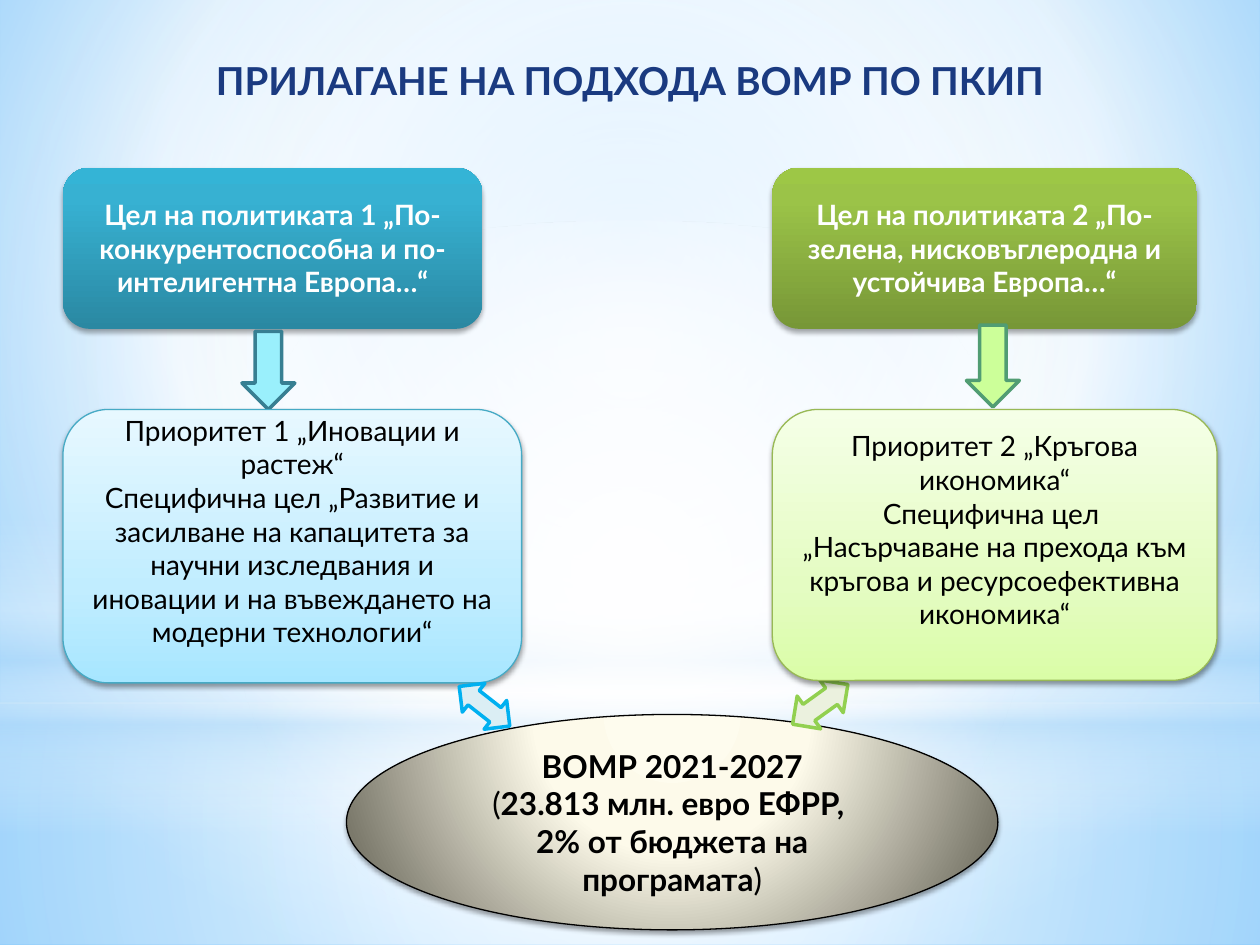
import pptx
import pptx.util
import pptx.dml.color
import pptx.enum.shapes
import pptx.enum.text
import pptx.oxml
import pptx.oxml.ns

Inches, Pt = pptx.util.Inches, pptx.util.Pt
Kind = pptx.enum.shapes.MSO_SHAPE
Anchor = pptx.enum.text.MSO_ANCHOR
CENTER = pptx.enum.text.PP_ALIGN.CENTER
NS = pptx.oxml.ns.nsdecls("a")


def color(code):
    return pptx.dml.color.RGBColor.from_string(code)


def blend(root, stops, ang=None, rect=None):
    """Swap the first gradient under root for these stops (place, colour, opacity)."""
    gs = "".join(
        f'<a:gs pos="{pos * 1000}"><a:srgbClr val="{code}">'
        f'<a:alpha val="{(alpha or [100])[0] * 1000}"/></a:srgbClr></a:gs>'
        for pos, code, *alpha in stops)
    if rect:
        sides = " ".join(f'{side}="{val * 1000}"' for side, val in zip("ltrb", rect))
        way = f'<a:path path="circle"><a:fillToRect {sides}/></a:path>'
    else:
        way = f'<a:lin ang="{ang * 60000}" scaled="0"/>'
    old = next(root.iter(pptx.oxml.ns.qn("a:gradFill")))
    old.getparent().replace(old, pptx.oxml.parse_xml(
        f'<a:gradFill {NS} rotWithShape="1"><a:gsLst>{gs}</a:gsLst>{way}</a:gradFill>'))


deck = pptx.Presentation()
deck.slide_width, deck.slide_height = Inches(10), Inches(7.5)
slide = deck.slides.add_slide(deck.slide_layouts[5])

# Background
slide.background.fill.gradient()
blend(slide.element, [(0, "9ED5FF"), (60, "FFFFFF"), (100, "5BB9FF")],
      rect=(20, 10, 20, 60))

# Gradients of the soft glows and of the boxes
mid = (50, 50, 50, 50)
floor = dict(rect=mid, stops=[(0, "FFFFFF", 91), (37, "FFFFFF", 76), (100, "B4DCFA", 79)])
sky = dict(rect=mid, stops=[(0, "FFFFFF", 89), (48, "FFFFFF", 62), (100, "B4DCFA", 79)])
band = dict(ang=90, stops=[(0, "FFFFFF", 0), (29, "FFFFFF", 30), (45, "B4DCFA", 40),
                           (55, "FFFFFF", 26), (65, "B4DCFA", 60), (100, "FFFFFF", 0)])
glow = dict(rect=mid, stops=[(0, "FFFFFF"), (56, "FFFFFF", 0)])
stone = dict(rect=(50, -80, 50, 180),
             stops=[(0, "FEFCEE"), (40, "FDFAEA"), (100, "7B796B")])
teal = dict(ang=270, stops=[(0, "2A88A2"), (80, "37B1D2"), (100, "34B4D6")])
green = dict(ang=270, stops=[(0, "779737"), (80, "9BC348"), (100, "9DC746")])
aqua = dict(ang=270, stops=[(0, "A7E6FF"), (35, "C1EDFF"), (100, "E7F8FF")])
lime = dict(ang=270, stops=[(0, "DAFDA7"), (35, "E4FCC2"), (100, "F5FFE7")])

# Text formats; the priority boxes sit a little above the middle
head = dict(size=Pt(16), bold=True, ink="FFFFFF")
body = dict(size=Pt(16), bold=False, ink="000000")
core = dict(size=Pt(18), bold=True, ink="000000")
raised = Inches(0.29)

# Wording: paragraphs as lists of runs
total = [["ВОМР 2021-2027"], ["(", "23.813 млн. евро ЕФРР, "],
         ["2% от бюджета на програмата", ")"]]
goal1 = [["Цел на политиката 1 „По-конкурентоспособна и по-интелигентна Европа…“"]]
goal2 = [["Цел на политиката 2 „По-зелена, нисковъглеродна и устойчива Европа…“"]]
prio1 = [["Приоритет 1 „Иновации и растеж“"],
         ["Специфична цел „Развитие и засилване на капацитета за научни изследвания "
          "и иновации и на въвеждането на модерни технологии“"]]
prio2 = [["Приоритет 2 „Кръгова икономика“"], ["Специфична цел "],
         ["„Насърчаване на прехода към кръгова и ресурсоефективна икономика“"]]

# Shapes from back to front: kind, frame, fill, line, width, turn, text, format
rect, oval, box = Kind.RECTANGLE, Kind.OVAL, Kind.ROUNDED_RECTANGLE
down, both = Kind.DOWN_ARROW, Kind.UP_DOWN_ARROW
parts = [
    (rect, (0, 5.58, 10, 1.92), floor, None, 0, 0, None, None),
    (rect, (0, 0, 10, 5.58), sky, None, 0, 0, None, None),
    (rect, (0, 4.12, 10, 2.5), band, None, 0, 0, None, None),
    (oval, (0, 1.75, 10, 5.58), glow, None, 0, 0, None, None),
    (oval, (2.75, 5.67, 5.17, 1.71), stone, "000000", 0.75, 0, total, core),
    (box, (0.5, 1.33, 3.33, 1.28), teal, None, 0, 0, goal1, head),
    (box, (6.13, 1.33, 3.37, 1.28), green, None, 0, 0, goal2, head),
    (down, (1.92, 2.63, 0.42, 0.62), "9AF0FC", "377F92", 2, 0, None, None),
    (down, (7.67, 2.58, 0.42, 0.65), "CCFF99", "519D73", 2, 0, None, None),
    (box, (0.5, 3.25, 3.64, 2.17), aqua, "46AAC5", 0.75, 0, prio1, body),
    (both, (3.7, 5.35, 0.29, 0.51), "DBEEF4", "00B0F0", 2, 128.1, None, None),
    (both, (6.35, 5.32, 0.32, 0.54), "EBF1DE", "92D050", 2, 234.3, None, None),
    (box, (6.13, 3.25, 3.53, 2.15), lime, "98B955", 0.75, 0, prio2, body),
]
for kind, at, fill, line, width, turn, text, form in parts:
    shape = slide.shapes.add_shape(kind, *map(Inches, at))
    shape.shadow.inherit = False
    shape.rotation = turn
    if isinstance(fill, dict):
        shape.fill.gradient()
        blend(shape.element, **fill)
    else:
        shape.fill.solid()
        shape.fill.fore_color.rgb = color(fill)
    if line:
        shape.line.color.rgb = color(line)
        shape.line.width = Pt(width)
    else:
        shape.line.fill.background()
    if not text:
        continue

    # Drop shadow under each box that holds text
    drop, alpha = (1.8, 35) if form is head else (1.6, 38)
    shade = next(shape.element.iter(pptx.oxml.ns.qn("a:effectLst")))
    shade.append(pptx.oxml.parse_xml(
        f'<a:outerShdw {NS} blurRad="{Pt(3.1)}" dist="{Pt(drop)}" dir="5400000" '
        f'rotWithShape="0"><a:srgbClr val="000000"><a:alpha val="{alpha * 1000}"/>'
        '</a:srgbClr></a:outerShdw>'))

    # Text
    frame = shape.text_frame
    frame.word_wrap = True
    frame.vertical_anchor = Anchor.MIDDLE
    if form is body:
        frame.margin_bottom = raised
    for num, runs in enumerate(text):
        para = frame.add_paragraph() if num else frame.paragraphs[0]
        para.alignment = CENTER
        for words in runs:
            run = para.add_run()
            run.text = words
            look = dict(name="Lato", size=form["size"],
                        bold=form["bold"] and words not in "()")
            for key, val in look.items():
                setattr(run.font, key, val)
            run.font.color.rgb = color(form["ink"])

# Title
title = slide.shapes.title
for key, val in dict(left=0, top=0, width=Inches(10), height=Inches(7.5)).items():
    setattr(title, key, val)
frame = title.text_frame
frame.text = "ПРИЛАГАНЕ НА ПОДХОДА ВОМР ПО ПКИП"
for key, val in dict(word_wrap=True, vertical_anchor=Anchor.TOP,
                     margin_top=Inches(0.45)).items():
    setattr(frame, key, val)
para = frame.paragraphs[0]
para.alignment = CENTER
for key, val in dict(name="Lato", size=Pt(22), bold=True).items():
    setattr(para.runs[0].font, key, val)
para.runs[0].font.color.rgb = color("1A3A80")
# Glows lie behind the title, the diagram in front of it
slide.shapes[4].element.addnext(title.element)

deck.save("out.pptx")
